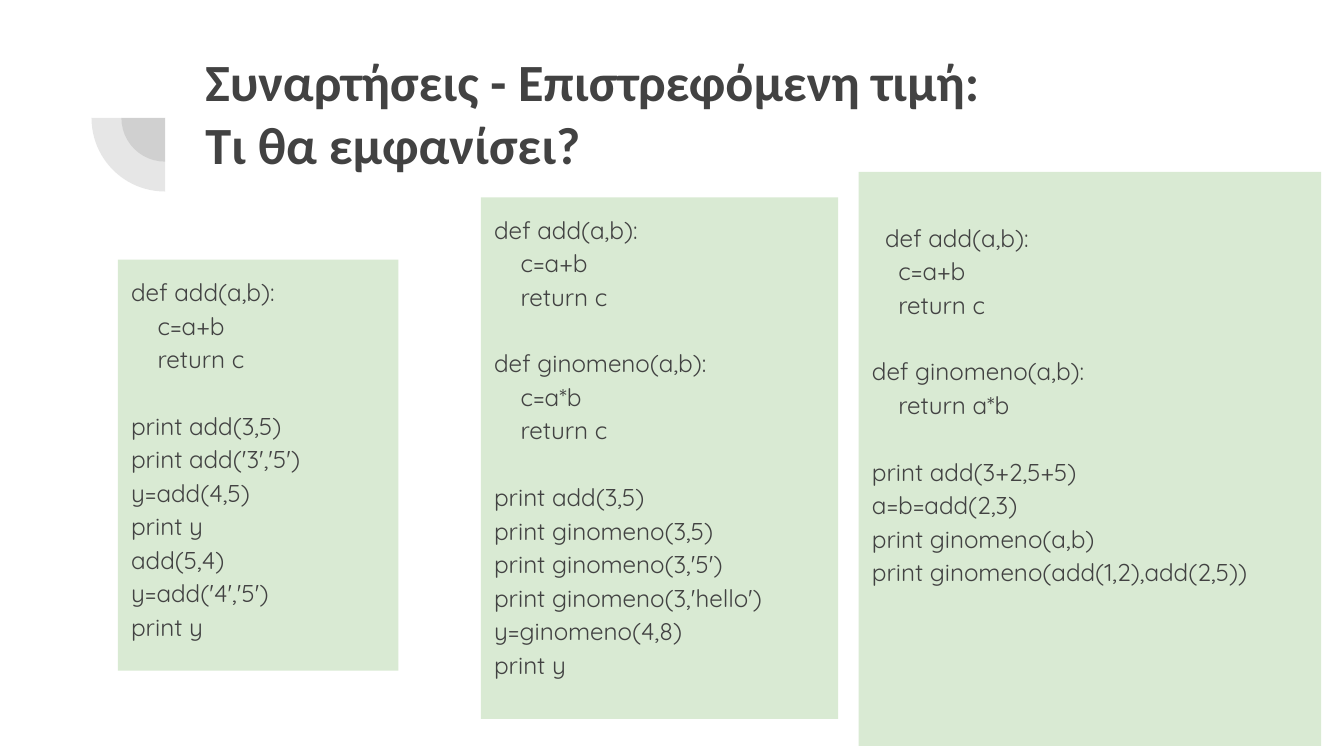
import pptx
import pptx.util
import pptx.dml.color
import pptx.enum.shapes
import pptx.enum.text
import pptx.oxml.ns
import lxml.etree

Cm, Pt = pptx.util.Cm, pptx.util.Pt
SHAPES = pptx.enum.shapes.MSO_SHAPE
COLORS = {"ink": "424242", "panel": "D9EAD3", "page": "FFFFFF"}

# Content
TITLE = ["Συναρτήσεις - Επιστρεφόμενη τιμή:", "Τι θα εμφανίσει?"]
ADD = ["def add(a,b):", "    c=a+b", "    return c"]

# Each program: left, top, width, height, top inset (cm), blocks of code
PROGRAMS = [
    (2.23, 4.91, 5.3, 7.77, 0.25, [
        ADD,
        ["print add(3,5)", "print add('3','5')", "y=add(4,5)", "print y",
         "add(5,4)", "y=add('4','5')", "print y"],
    ]),
    (9.09, 3.73, 6.75, 9.86, 0.25, [
        ADD,
        ["def ginomeno(a,b):", "    c=a*b", "    return c"],
        ["print add(3,5)", "print ginomeno(3,5)", "print ginomeno(3,'5')",
         "print ginomeno(3,'hello')", "y=ginomeno(4,8)", "print y"],
    ]),
    (16.23, 3.25, 8.74, 10.85, 0.88, [
        ["  " + ADD[0]] + ADD[1:],
        ["def ginomeno(a,b):", "    return a*b"],
        ["print add(3+2,5+5)", "a=b=add(2,3)", "print ginomeno(a,b)",
         "print ginomeno(add(1,2),add(2,5))"],
    ]),
]
CODE_LINE = Pt(17.9)  # height of one line of code, the gap between blocks

# Quarter rings: concentric pies, center and diameters (cm)
PIE_CENTER = (3.12, 2.23)
PIE_DIAMETERS = [1.65, 2.78]


def rgb(name):
    return pptx.dml.color.RGBColor.from_string(COLORS[name])


def plain_shape(kind, left, top, width, height, color):
    shape = slide.shapes.add_shape(kind, Cm(left), Cm(top), Cm(width), Cm(height))
    shape.shadow.inherit = False
    shape.fill.solid()
    shape.fill.fore_color.rgb = rgb(color)
    shape.line.fill.background()
    return shape


def set_frame(frame, top_inset=0.25):
    frame.word_wrap = True
    frame.vertical_anchor = pptx.enum.text.MSO_ANCHOR.TOP
    frame.margin_left = frame.margin_right = frame.margin_bottom = Cm(0.25)
    frame.margin_top = Cm(top_inset)


def add_run(paragraph, text, font, size, bold=False):
    run = paragraph.add_run()
    run.text = text
    run.font.name, run.font.size, run.font.bold = font, Pt(size), bold
    run.font.color.rgb = rgb("ink")


presentation = pptx.Presentation()
presentation.slide_width, presentation.slide_height = Cm(25.4), Cm(14.29)
slide = presentation.slides.add_slide(presentation.slide_layouts[6])
slide.background.fill.solid()
slide.background.fill.fore_color.rgb = rgb("page")

# Translucent quarter rings beside the title
for diameter in PIE_DIAMETERS:
    left, top = (center - diameter / 2 for center in PIE_CENTER)
    pie = plain_shape(SHAPES.PIE, left, top, diameter, diameter, "ink")
    pie.adjustments[0], pie.adjustments[1] = 108, 162
    pie.rotation = 270
    fill_color = pie.fill._xPr.find(".//" + pptx.oxml.ns.qn("a:srgbClr"))
    lxml.etree.SubElement(fill_color, pptx.oxml.ns.qn("a:alpha"), val="13000")

# Title
title = slide.shapes.add_textbox(Cm(3.63), Cm(0.69), Cm(20.42), Cm(2.77))
set_frame(title.text_frame)
heading = title.text_frame.paragraphs[0]
for index, line in enumerate(TITLE):
    if index:
        heading.add_line_break()
    add_run(heading, line, "Calibri", 28, bold=True)

# Programs
for left, top, width, height, top_inset, blocks in PROGRAMS:
    program = plain_shape(SHAPES.RECTANGLE, left, top, width, height, "panel")
    frame = program.text_frame
    set_frame(frame, top_inset)
    for block_index, block in enumerate(blocks):
        for line_index, code in enumerate(block):
            first = block_index == line_index == 0
            paragraph = frame.paragraphs[0] if first else frame.add_paragraph()
            paragraph.alignment = pptx.enum.text.PP_ALIGN.LEFT
            paragraph.line_spacing = 1.15
            if block_index and not line_index:
                paragraph.space_before = CODE_LINE
            add_run(paragraph, code, "Quicksand", 13)

presentation.save("out.pptx")
